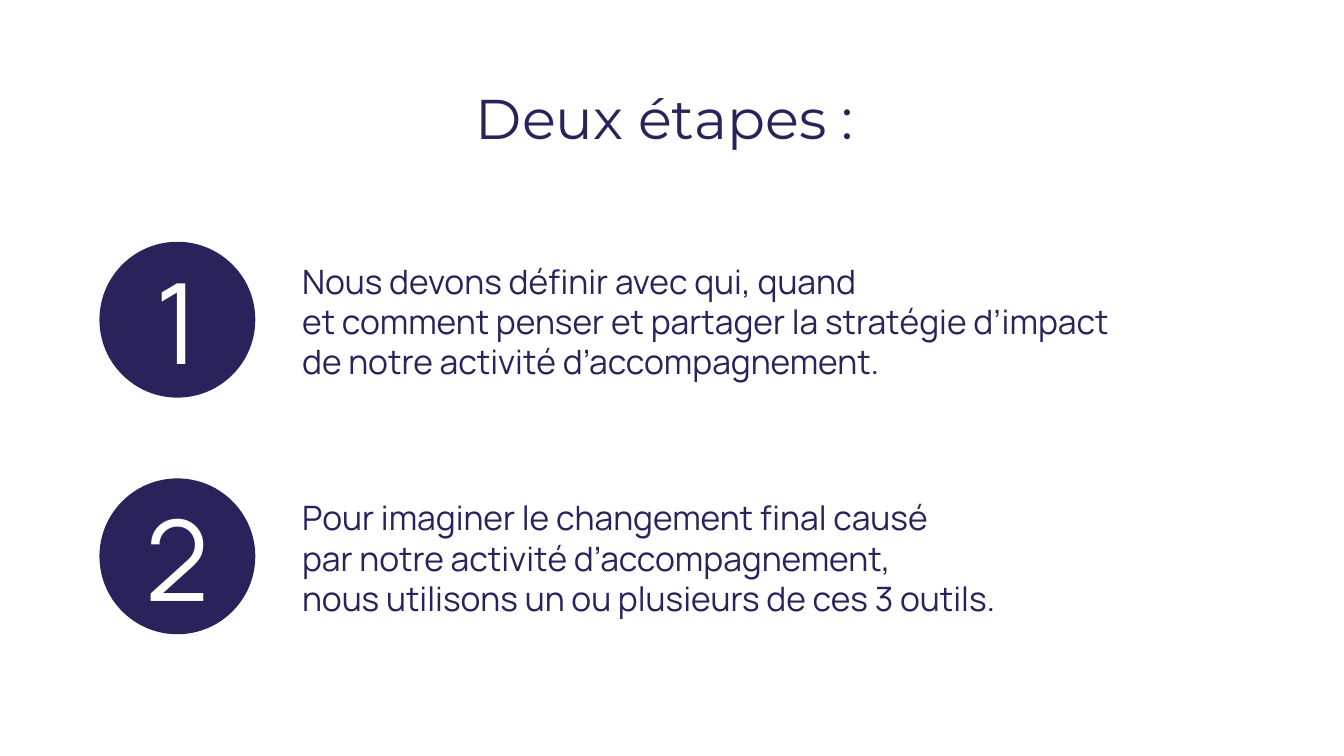
from dataclasses import dataclass

from pptx import Presentation
from pptx.dml.color import RGBColor
from pptx.enum.shapes import MSO_SHAPE
from pptx.enum.text import MSO_ANCHOR, MSO_AUTO_SIZE, PP_ALIGN
from pptx.slide import Slide
from pptx.text.text import TextFrame
from pptx.util import Inches, Length, Pt

NAVY = "29235C"
WHITE = "FFFFFF"
WIDTH = Inches(10)
HEIGHT = Length(WIDTH * 9 // 16)
DISC_LEFT, DISC_SIZE = 0.074, 0.116
BODY_LEFT, BODY_WIDTH, BODY_HEIGHT = 0.215, 0.726, 0.192
FIRST_ROW, ROW_PITCH = 0.423, 0.313


@dataclass
class Step:
    number: int
    paragraphs: list[str]


STEPS = [
    Step(1, [
        "Nous devons définir avec qui, quand \n"
        "et comment penser et partager la stratégie d’impact \n"
        "de notre activité d’accompagnement.",
    ]),
    Step(2, [
        "Pour imaginer le changement final causé",
        "par notre activité d’accompagnement, \n"
        "nous utilisons un ou plusieurs de ces 3 outils.",
    ]),
]


def across(share: float) -> Length:
    return Length(round(WIDTH * share))


def down(share: float) -> Length:
    return Length(round(HEIGHT * share))


def color(value: str) -> RGBColor:
    return RGBColor.from_string(value)


def write(frame: TextFrame, paragraphs: list[str], *, size: float, ink: str = NAVY,
          font: str = "Manrope", align: PP_ALIGN = PP_ALIGN.LEFT,
          anchor: MSO_ANCHOR = MSO_ANCHOR.TOP, inset: float = 0.1) -> None:
    frame.word_wrap = True
    frame.auto_size = MSO_AUTO_SIZE.NONE
    frame.vertical_anchor = anchor
    frame.margin_left = frame.margin_right = Inches(inset)
    frame.margin_top = frame.margin_bottom = Inches(inset)
    for index, text in enumerate(paragraphs):
        paragraph = frame.add_paragraph() if index else frame.paragraphs[0]
        paragraph.text = text
        paragraph.alignment = align
        paragraph.font.size = Pt(size)
        for run in paragraph.runs:
            run.font.name = font
            run.font.size = Pt(size)
            run.font.color.rgb = color(ink)


def draw_step(slide: Slide, step: Step, middle: float) -> None:
    diameter = across(DISC_SIZE)
    disc = slide.shapes.add_shape(
        MSO_SHAPE.OVAL, across(DISC_LEFT), down(middle) - diameter // 2, diameter, diameter)
    disc.shadow.inherit = False
    disc.fill.solid()
    disc.fill.fore_color.rgb = color(NAVY)
    disc.line.fill.background()
    write(disc.text_frame, [str(step.number)], size=60, ink=WHITE,
          align=PP_ALIGN.CENTER, anchor=MSO_ANCHOR.MIDDLE)
    body = slide.shapes.add_textbox(
        across(BODY_LEFT), down(middle - BODY_HEIGHT / 2), across(BODY_WIDTH), down(BODY_HEIGHT))
    write(body.text_frame, step.paragraphs, size=18)


def main() -> None:
    deck = Presentation()
    deck.slide_width, deck.slide_height = WIDTH, HEIGHT
    slide = deck.slides.add_slide(deck.slide_layouts[5])
    slide.background.fill.solid()
    slide.background.fill.fore_color.rgb = color(WHITE)

    title = slide.shapes.title
    title.left, title.top = across(0), down(0.102)
    title.width, title.height = across(1), down(0.103)
    write(title.text_frame, ["Deux étapes : "], size=30, font="Montserrat",
          align=PP_ALIGN.CENTER, inset=0.05)

    for row, step in enumerate(STEPS):
        draw_step(slide, step, FIRST_ROW + row * ROW_PITCH)
    deck.save("out.pptx")


if __name__ == "__main__":
    main()
